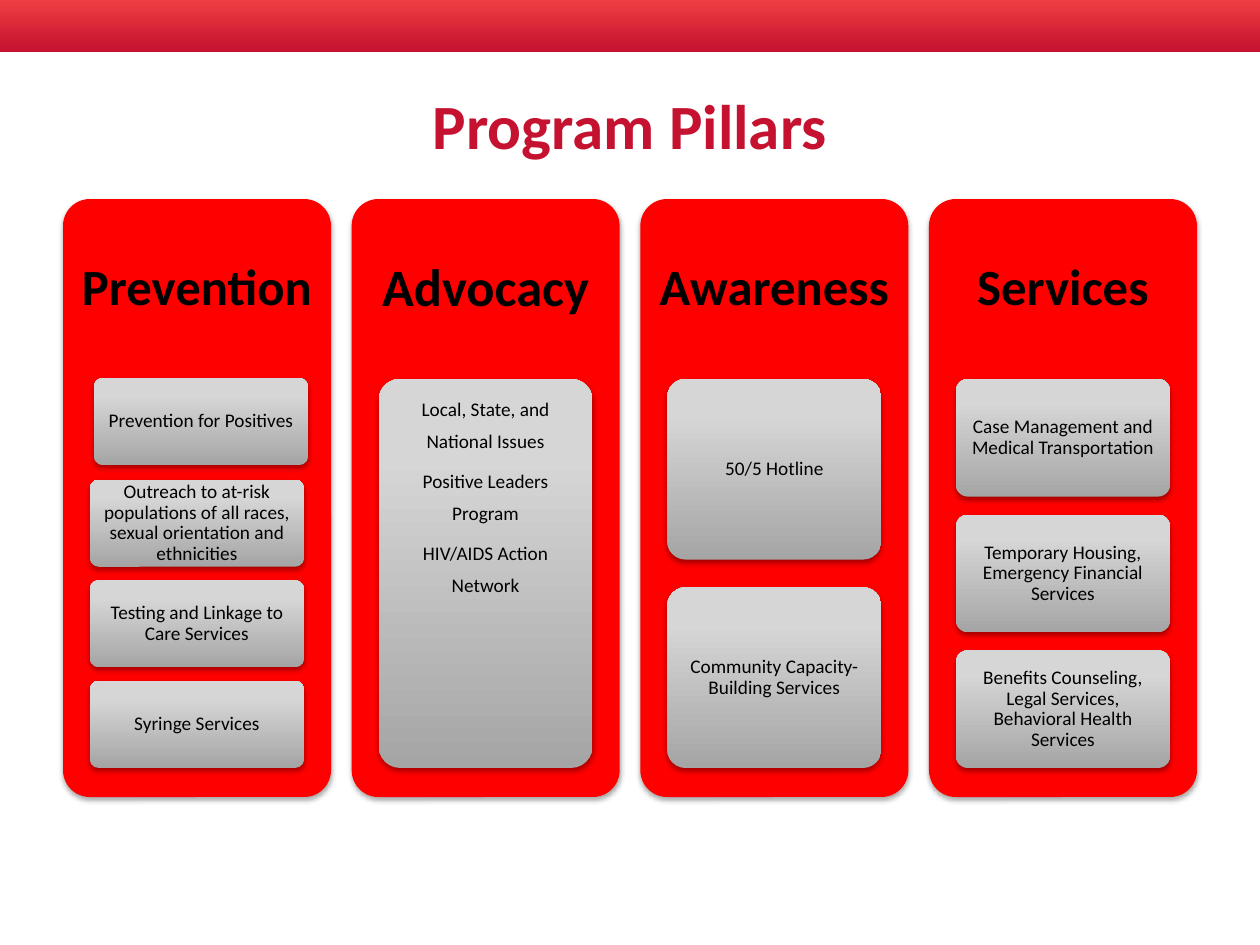
from lxml import etree
from pptx import Presentation
from pptx.dml.color import RGBColor
from pptx.enum.shapes import MSO_SHAPE as Shape
from pptx.enum.text import MSO_ANCHOR as Anchor, PP_ALIGN as Align
from pptx.oxml import parse_xml
from pptx.oxml.ns import nsdecls, qn
from pptx.util import Emu, Pt

SLIDE_WIDTH, SLIDE_HEIGHT = 1260, 945
FONT = "Calibri"
RED, CRIMSON, BLACK = "FF0000", "C41230", "000000"
BANNER_GRADIENT = (("EF3E42", 0), (CRIMSON, 1))
CARD_GRADIENT = (("A5A5A5", 0), ("D6D6D6", 0.8))
CARD_GAP = 0.154  # share of the card height

# heading, heading size, cards (each a list of paragraphs)
PILLARS = [
    ("Prevention", 29, [
        ["Prevention for Positives"],
        ["Outreach to at-risk populations of all races, sexual orientation and ethnicities"],
        ["Testing and Linkage to Care Services"],
        ["Syringe Services"],
    ]),
    ("Advocacy", 30, [
        ["Local, State, and National Issues", "Positive Leaders Program",
         "HIV/AIDS Action Network"],
    ]),
    ("Awareness", 29, [
        ["50/5 Hotline"],
        ["Community Capacity-Building Services"],
    ]),
    ("Services", 29, [
        ["Case Management and Medical Transportation"],
        ["Temporary Housing, Emergency Financial Services"],
        ["Benefits Counseling, Legal Services, Behavioral Health Services"],
    ]),
]


def px(length):
    return Emu(round(length * 914400 / 126))


def box(left, top, width, height):
    return [px(length) for length in (left, top, width, height)]


def color(hex_value):
    return RGBColor.from_string(hex_value)


def fill_gradient(shape, stops, angle):
    shape.fill.gradient()
    shape.fill.gradient_angle = angle
    for stop, (hex_value, position) in zip(shape.fill.gradient_stops, stops):
        stop.color.rgb = color(hex_value)
        stop.position = position


def add_soft_shadow(shape):
    shape.shadow.inherit = False
    effects = shape._element.spPr.find(qn("a:effectLst"))
    effects.append(parse_xml(
        f'<a:outerShdw {nsdecls("a")} blurRad="40000" dist="23000" dir="5400000" '
        'rotWithShape="0"><a:srgbClr val="000000"><a:alpha val="35000"/></a:srgbClr>'
        '</a:outerShdw>'))


def add_rounded(shapes, left, top, width, height):
    shape = shapes.add_shape(Shape.ROUNDED_RECTANGLE, *box(left, top, width, height))
    shape.adjustments[0] = 0.1
    shape.line.fill.background()
    add_soft_shadow(shape)
    return shape


def write(shape, lines, size, hex_value=BLACK, bold=False, spacing=0.9,
          anchor=Anchor.MIDDLE, margins=(4, 3)):
    frame = shape.text_frame
    frame.word_wrap = True
    frame.vertical_anchor = anchor
    frame.margin_left = frame.margin_right = px(margins[0])
    frame.margin_top = frame.margin_bottom = px(margins[1])
    frame.text = "\n".join(lines)
    for paragraph in frame.paragraphs:
        paragraph.alignment = Align.CENTER
        paragraph.line_spacing = spacing
        paragraph.space_after = Pt(4)
        font = paragraph.font
        font.name, font.size, font.bold = FONT, Pt(size), bold
        font.color.rgb = color(hex_value)


def add_banner(slide, left, top, width, height):
    banner = slide.shapes.add_shape(Shape.RECTANGLE, *box(left, top, width, height))
    fill_gradient(banner, BANNER_GRADIENT, 270)
    banner.line.fill.background()
    banner.shadow.inherit = False


def add_title(slide, left, top, width, height):
    title = slide.shapes.title
    title.left, title.top, title.width, title.height = box(left, top, width, height)
    write(title, ["Program Pillars"], 36, CRIMSON, bold=True, spacing=1, margins=(13, 6))


def add_cards(shapes, cards, left, top, width, height):
    card_height = height / (len(cards) + CARD_GAP * (len(cards) - 1))
    for index, lines in enumerate(cards):
        # The first of four cards sits slightly off the column
        shift = 4 if len(cards) == 4 and index == 0 else 0
        card_top = top + index * card_height * (1 + CARD_GAP) - shift / 4
        card = add_rounded(shapes, left + shift, card_top, width, card_height)
        fill_gradient(card, CARD_GRADIENT, 90)
        is_list = len(lines) > 1
        write(card, lines, 11, spacing=1.4 if is_list else 0.9,
              anchor=Anchor.TOP if is_list else Anchor.MIDDLE)


def add_pillar(shapes, pillar, left, top, width, height):
    heading, size, cards = pillar
    column = add_rounded(shapes, left, top, width, height)
    column.fill.solid()
    column.fill.fore_color.rgb = color(RED)
    label = shapes.add_textbox(*box(left, top, width, 180))
    write(label, [heading], size, bold=True, margins=(15, 15))
    add_cards(shapes, cards, left + 27, top + 180, width - 54, height - 209)


def add_pillars(slide, left, top, width, height):
    group = slide.shapes.add_group_shape()
    pillar_width = 268
    step = (width - pillar_width) / (len(PILLARS) - 1)
    for index, pillar in enumerate(PILLARS):
        add_pillar(group.shapes, pillar, left + index * step, top, pillar_width, height)


def main():
    presentation = Presentation()
    presentation.slide_width, presentation.slide_height = px(SLIDE_WIDTH), px(SLIDE_HEIGHT)
    slide = presentation.slides.add_slide(presentation.slide_layouts[5])
    add_banner(slide, 0, 0, SLIDE_WIDTH, 52)
    add_title(slide, 63, 53, 1134, 142)
    add_pillars(slide, 63, 199, 1134, 598)
    presentation.save("out.pptx")


if __name__ == "__main__":
    main()
